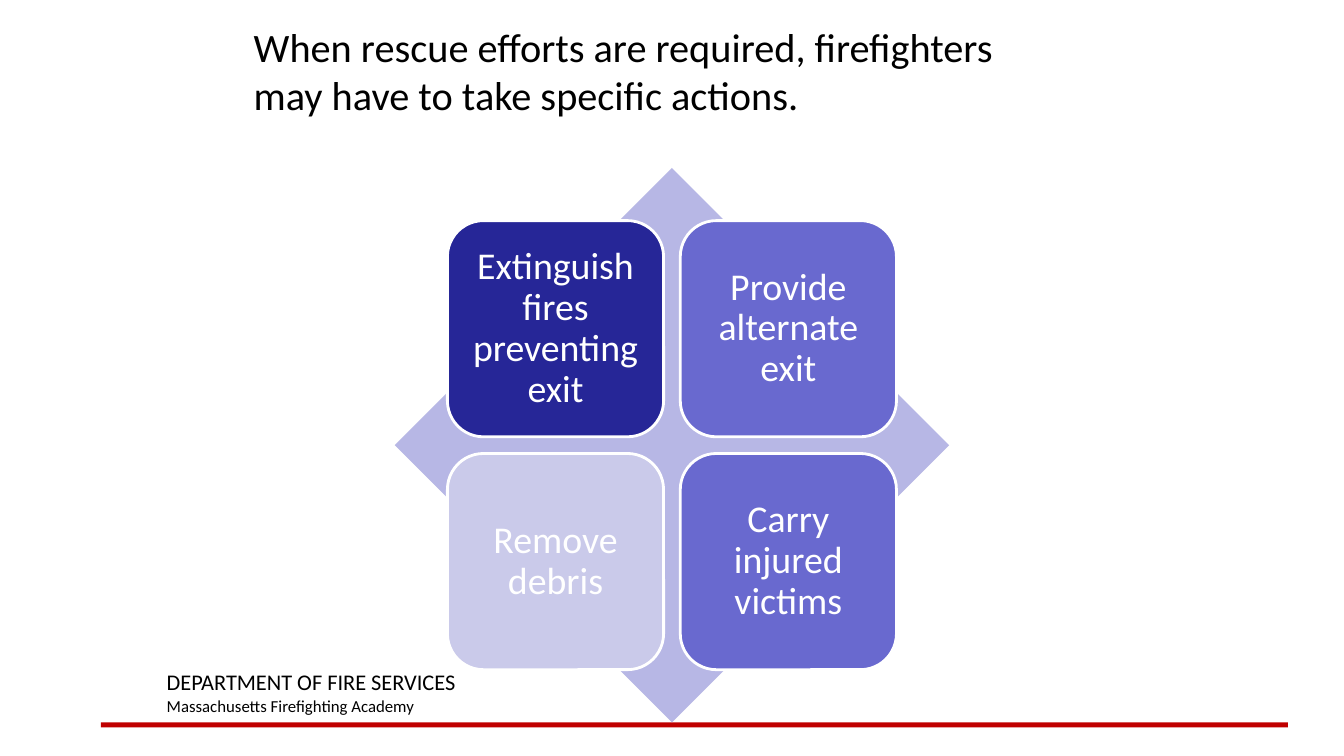
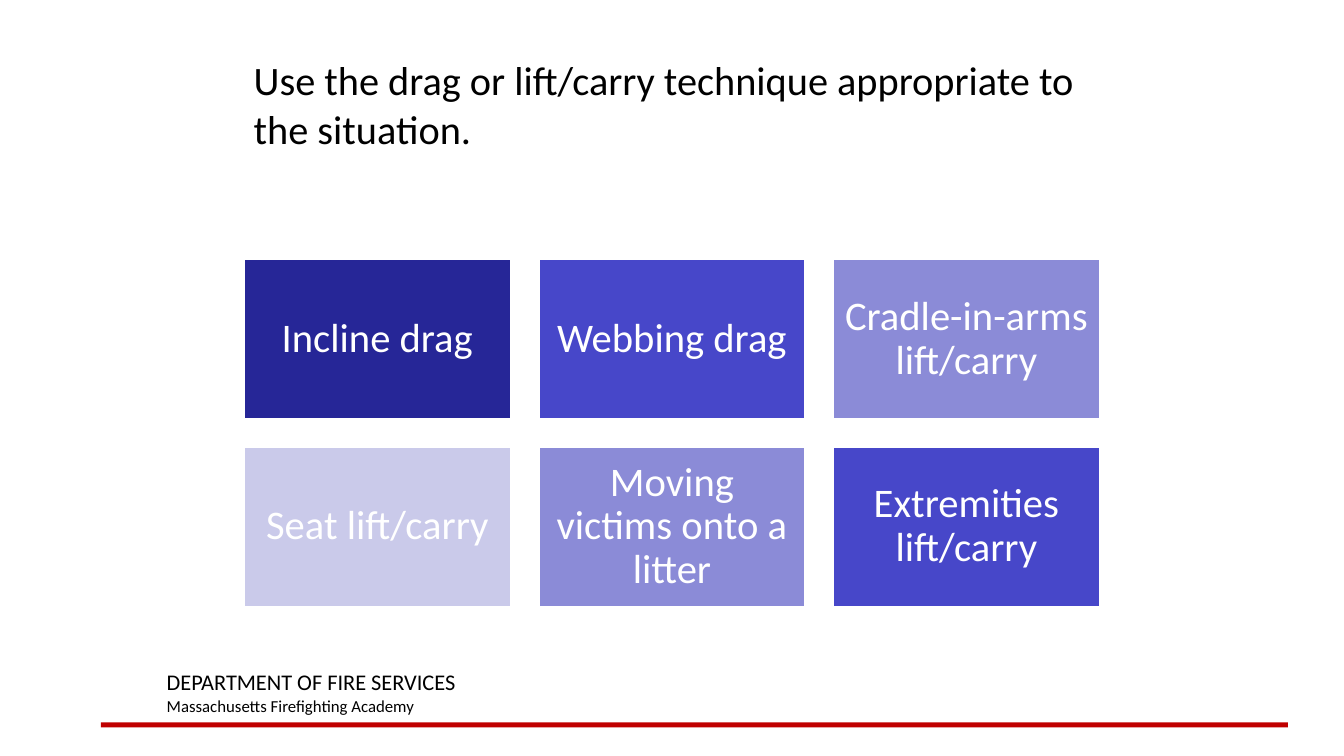
"""Build two slides on rescue actions and on drag and lift/carry techniques."""
from dataclasses import dataclass

from pptx import Presentation
from pptx.dml.color import RGBColor
from pptx.enum.shapes import MSO_SHAPE
from pptx.enum.text import MSO_ANCHOR, MSO_AUTO_SIZE, PP_ALIGN
from pptx.util import Pt


@dataclass(frozen=True)
class Theme:
    font: str = "Calibri"
    black: str = "000000"
    white: str = "FFFFFF"
    red: str = "C00000"
    navy: str = "262697"
    blue: str = "4747C9"
    violet: str = "6969CF"
    lavender: str = "8B8BD7"
    mist: str = "B7B7E5"
    pale: str = "CACAEA"
    title_size: float = 28.8
    department_size: float = 16
    academy_size: float = 12
    action_size: float = 27
    technique_size: float = 29


theme = Theme()


def style(para, size, color, align=PP_ALIGN.LEFT):
    para.alignment = align
    para.font.name = theme.font
    para.font.size = Pt(size)
    para.font.color.rgb = RGBColor.from_string(color)


def add_block(page, kind, left, top, width, height, fill, text="", size=0):
    block = page.shapes.add_shape(kind, Pt(left), Pt(top), Pt(width), Pt(height))
    block.shadow.inherit = False
    block.fill.solid()
    block.fill.fore_color.rgb = RGBColor.from_string(fill)
    if not text:
        block.line.fill.background()
        return block
    block.line.color.rgb = RGBColor.from_string(theme.white)
    block.line.width = Pt(2)
    frame = block.text_frame
    frame.word_wrap = True
    frame.vertical_anchor = MSO_ANCHOR.MIDDLE
    inset = Pt(0.3 * size)
    frame.margin_left = frame.margin_right = inset
    frame.margin_top = frame.margin_bottom = inset
    para = frame.paragraphs[0]
    para.text = text
    para.line_spacing = 0.9
    style(para, size, theme.white, PP_ALIGN.CENTER)
    return block


deck = Presentation()
deck.slide_width, deck.slide_height = Pt(960), Pt(540)
layout = deck.slide_layouts[5]
for holder in list(layout.placeholders):
    if holder.placeholder_format.idx != 0:
        holder.element.getparent().remove(holder.element)

titles = [
    ("When rescue efforts are required, firefighters may have to take specific actions.",
     (174, 12, 582, 96)),
    ("Use the drag or lift/carry technique appropriate to the situation.",
     (174, 36, 612, 72)),
]
pages = []
for text, place in titles:
    page = deck.slides.add_slide(layout)
    title = page.shapes.title
    title.left, title.top, title.width, title.height = map(Pt, place)
    title.text_frame.text = text
    title.text_frame.word_wrap = True
    title.text_frame.auto_size = MSO_AUTO_SIZE.NONE
    title.text_frame.vertical_anchor = MSO_ANCHOR.TOP
    style(title.text_frame.paragraphs[0], theme.title_size, theme.black)
    pages.append(page)
actions_page, techniques_page = pages

red_band = add_block(actions_page, MSO_SHAPE.RECTANGLE, 72, 516, 848, 3.6, theme.red)
footer = actions_page.shapes.add_textbox(Pt(112), Pt(474), Pt(408), Pt(41))
footer.text_frame.word_wrap = True
footer.text_frame.auto_size = MSO_AUTO_SIZE.SHAPE_TO_FIT_TEXT
footer.text_frame.text = "DEPARTMENT OF FIRE SERVICES\nMassachusetts Firefighting Academy"
for para, size in zip(footer.text_frame.paragraphs,
                      (theme.department_size, theme.academy_size)):
    style(para, size, theme.black)
for shared in (red_band, footer):
    layout.shapes.element.append(shared.element)

diamond_left, diamond_top, diamond_side = 282, 120, 396
add_block(actions_page, MSO_SHAPE.DIAMOND, diamond_left, diamond_top,
          diamond_side, diamond_side, theme.mist)
actions = [
    ("Extinguish fires preventing exit", theme.navy),
    ("Provide alternate exit", theme.violet),
    ("Remove debris", theme.pale),
    ("Carry injured victims", theme.violet),
]
tile_side = 0.39 * diamond_side
tile_pitch = 0.42 * diamond_side
tile_offset = (diamond_side - tile_pitch - tile_side) / 2
for index, (text, fill) in enumerate(actions):
    row, column = divmod(index, 2)
    add_block(actions_page, MSO_SHAPE.ROUNDED_RECTANGLE,
              diamond_left + tile_offset + column * tile_pitch,
              diamond_top + tile_offset + row * tile_pitch,
              tile_side, tile_side, fill, text, theme.action_size)

techniques = [
    ("Incline drag", theme.navy),
    ("Webbing drag", theme.blue),
    ("Cradle-in-arms lift/carry", theme.lavender),
    ("Seat lift/carry", theme.pale),
    ("Moving victims onto a litter", theme.lavender),
    ("Extremities lift/carry", theme.blue),
]
card_width = 612 / 3.2
card_height = 0.6 * card_width
card_gap = 0.1 * card_width
for index, (text, fill) in enumerate(techniques):
    row, column = divmod(index, 3)
    add_block(techniques_page, MSO_SHAPE.RECTANGLE,
              174 + column * (card_width + card_gap),
              185 + row * (card_height + card_gap),
              card_width, card_height, fill, text, theme.technique_size)

deck.save("out.pptx")
